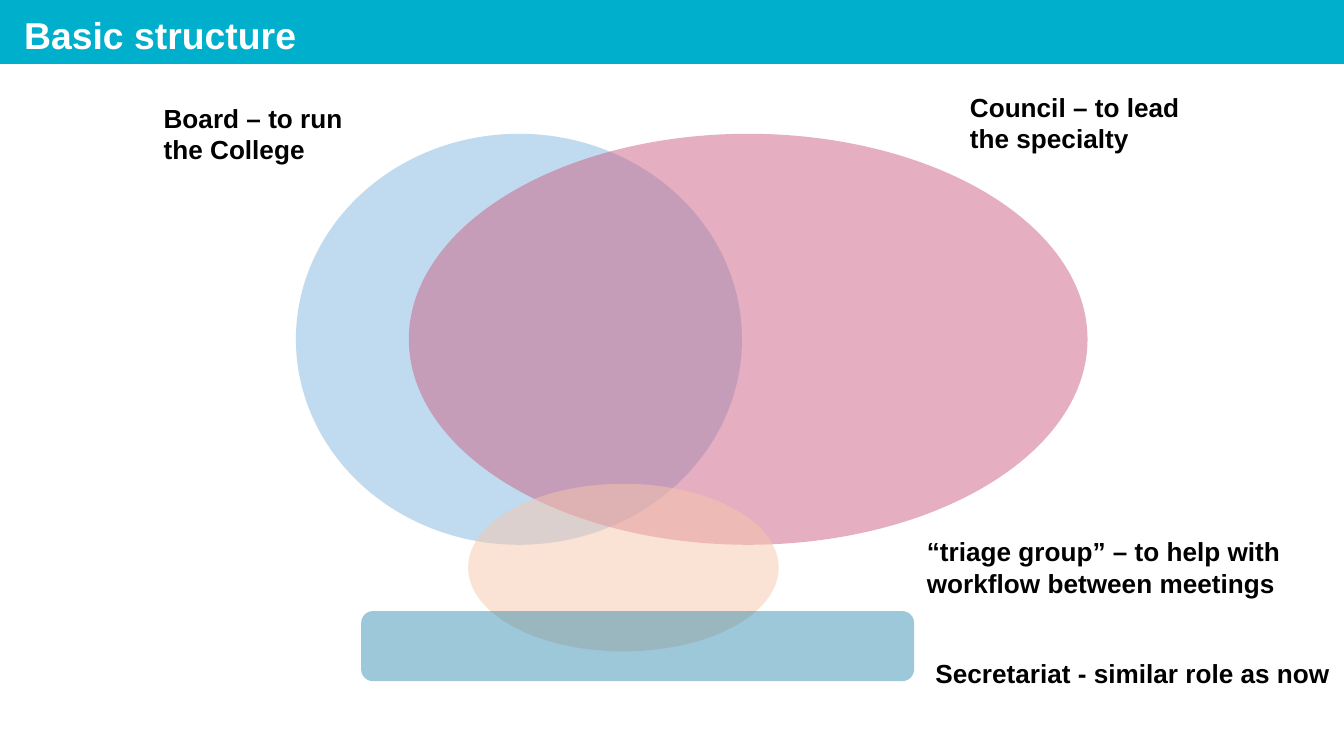
from dataclasses import dataclass

import lxml.etree
import pptx
import pptx.dml.color
import pptx.enum.shapes
import pptx.oxml.ns
import pptx.slide
import pptx.util

Pt = pptx.util.Pt
SHAPE = pptx.enum.shapes.MSO_SHAPE


@dataclass(frozen=True)
class Theme:
    font: str = "Arial"
    title_size: int = 20
    label_size: int = 14
    title_text: str = "FFFFFF"
    label_text: str = "000000"
    banner: str = "00AFCB"
    board: str = "83B9E2"
    council: str = "CD6084"
    triage: str = "F6C6AD"
    secretariat: str = "0B76A0"


@dataclass(frozen=True)
class Box:
    left: float
    top: float
    width: float
    height: float

    def lengths(self) -> tuple:
        return Pt(self.left), Pt(self.top), Pt(self.width), Pt(self.height)


@dataclass(frozen=True)
class Body:
    kind: SHAPE
    box: Box
    color: str
    opacity: int = 100


@dataclass(frozen=True)
class Label:
    text: str
    box: Box
    size: int
    color: str
    wraps: bool = True


THEME = Theme()
SLIDE = Box(0, 0, 720, 405)

BODIES = [
    Body(SHAPE.RECTANGLE, Box(0, -0.75, SLIDE.width, 35), THEME.banner),
    Body(SHAPE.OVAL, Box(158.5, 71.7, 239, 220.2), THEME.board, 50),
    Body(SHAPE.OVAL, Box(219, 71.7, 363.6, 220.2), THEME.council, 50),
    Body(SHAPE.OVAL, Box(250.8, 259.2, 166.4, 89.8), THEME.triage, 50),
    Body(SHAPE.ROUNDED_RECTANGLE, Box(193.5, 327.4, 296.2, 37.5), THEME.secretariat, 40),
]

LABELS = [
    Label("Basic structure", Box(5.8, 3, 239, 48), THEME.title_size, THEME.title_text),
    Label("Board – to run the College", Box(80.6, 51.2, 130, 58),
          THEME.label_size, THEME.label_text),
    Label("Council – to lead\nthe specialty", Box(512.5, 45.2, 176, 41),
          THEME.label_size, THEME.label_text),
    Label("“triage group” – to help with workflow between meetings",
          Box(489.5, 283.5, 224, 58), THEME.label_size, THEME.label_text),
    Label("Secretariat - similar role as now", Box(494, 348.8, 226, 24.5),
          THEME.label_size, THEME.label_text, wraps=False),
]


def rgb(color: str) -> pptx.dml.color.RGBColor:
    return pptx.dml.color.RGBColor.from_string(color)


def draw_body(slide: pptx.slide.Slide, body: Body) -> None:
    shape = slide.shapes.add_shape(body.kind, *body.box.lengths())
    shape.shadow.inherit = False
    shape.line.fill.background()
    shape.fill.solid()
    shape.fill.fore_color.rgb = rgb(body.color)
    if body.opacity < 100:
        qn = pptx.oxml.ns.qn
        fill_color = shape.element.spPr.find(f"{qn('a:solidFill')}/{qn('a:srgbClr')}")
        lxml.etree.SubElement(fill_color, qn("a:alpha"), val=str(body.opacity * 1000))


def draw_label(slide: pptx.slide.Slide, label: Label) -> None:
    frame = slide.shapes.add_textbox(*label.box.lengths()).text_frame
    frame.word_wrap = label.wraps
    frame.text = label.text
    for paragraph in frame.paragraphs:
        for run in paragraph.runs:
            run.font.name = THEME.font
            run.font.size = Pt(label.size)
            run.font.bold = True
            run.font.color.rgb = rgb(label.color)


def main() -> None:
    presentation = pptx.Presentation()
    presentation.slide_width = Pt(SLIDE.width)
    presentation.slide_height = Pt(SLIDE.height)
    slide = presentation.slides.add_slide(presentation.slide_layouts[6])
    for body in BODIES:
        draw_body(slide, body)
    for label in LABELS:
        draw_label(slide, label)
    presentation.save("out.pptx")


if __name__ == "__main__":
    main()
